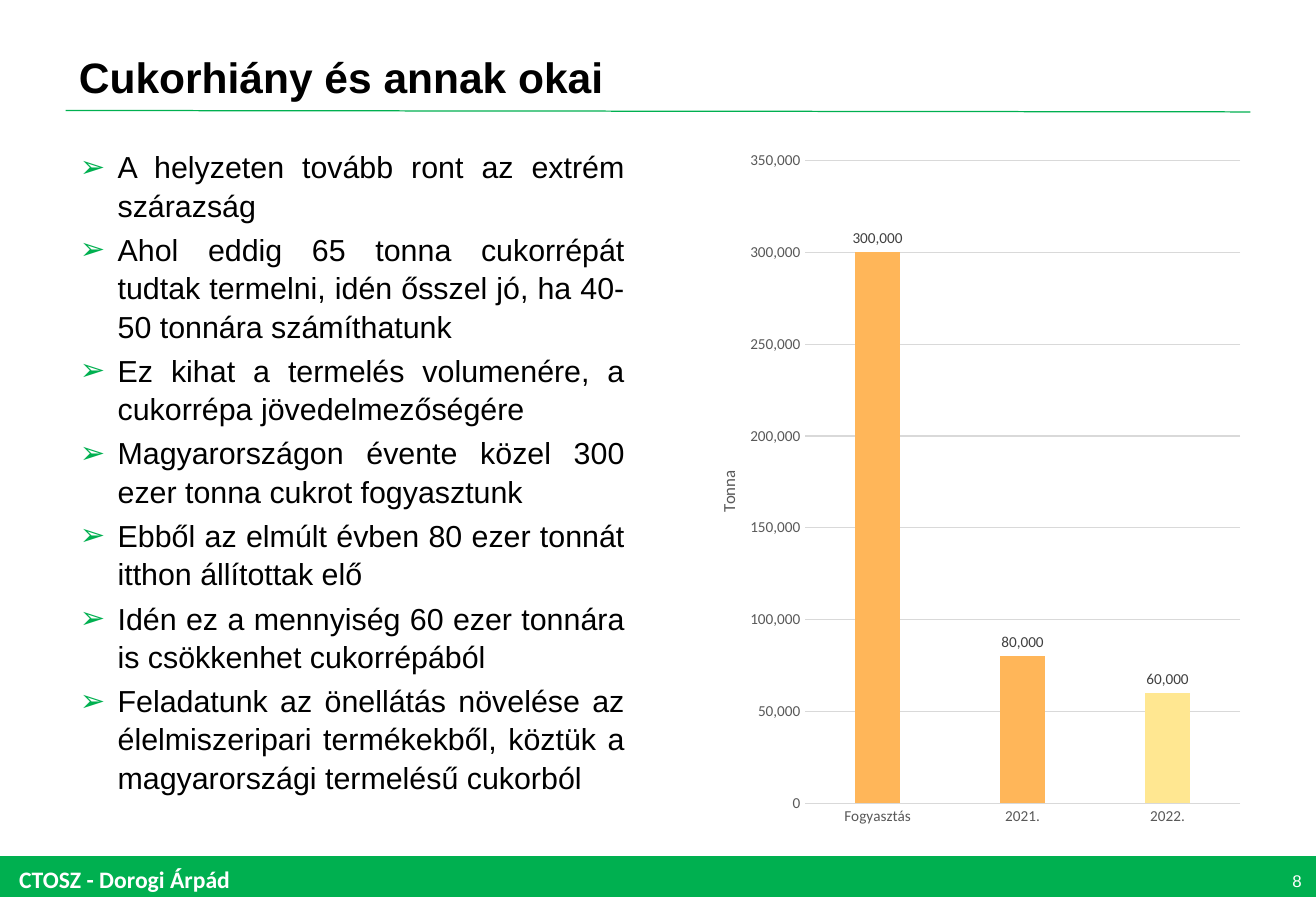
from lxml import etree
from pptx import Presentation
from pptx.chart.data import CategoryChartData
from pptx.dml.color import RGBColor
from pptx.enum.chart import XL_CHART_TYPE, XL_LABEL_POSITION, XL_TICK_MARK
from pptx.enum.shapes import MSO_CONNECTOR, MSO_SHAPE
from pptx.enum.text import MSO_ANCHOR, MSO_AUTO_SIZE, PP_ALIGN
from pptx.oxml import parse_xml
from pptx.oxml.ns import nsdecls, qn
from pptx.util import Cm, Pt

GREEN, BLACK, WHITE = "00B050", "000000", "FFFFFF"
GREY, GRID, LABEL = "595959", "D9D9D9", "404040"
ORANGE, YELLOW = "FFB659", "FFE791"

REASONS = [
    "A helyzeten tovább ront az extrém szárazság",
    "Ahol eddig 65 tonna cukorrépát tudtak termelni, idén ősszel jó, ha 40-50 tonnára számíthatunk",
    "Ez kihat a termelés volumenére, a cukorrépa jövedelmezőségére",
    "Magyarországon évente közel 300 ezer tonna cukrot fogyasztunk",
    "Ebből az elmúlt évben 80 ezer tonnát itthon állítottak elő",
    "Idén ez a mennyiség 60 ezer tonnára is csökkenhet cukorrépából",
    "Feladatunk az önellátás növelése az élelmiszeripari termékekből, "
    "köztük a magyarországi termelésű cukorból",
]
SUGAR = {"Fogyasztás": 300000, "2021.": 80000, "2022.": 60000}


def rgb(value):
    return RGBColor.from_string(value)


def set_attrs(target, values):
    for name, value in values.items():
        setattr(target, name, value)


def set_font(font, size, color, name="Arial", bold=False):
    set_attrs(font, dict(size=Pt(size), name=name, bold=bold))
    font.color.rgb = rgb(color)


def set_line(line, color, width):
    line.color.rgb = rgb(color)
    line.width = Pt(width)


def layout_xml(**values):
    items = "".join(f'<c:{tag} val="{val}"/>' for tag, val in values.items())
    return parse_xml(f'<c:layout {nsdecls("c")}><c:manualLayout>{items}'
                     '</c:manualLayout></c:layout>')


class SlideBuilder:
    frame = dict(margin_left=Cm(0.3), margin_right=Cm(0.3),
                 margin_top=Cm(0.15), margin_bottom=Cm(0.15),
                 word_wrap=True, auto_size=MSO_AUTO_SIZE.NONE)

    def __init__(self, prs):
        self.s = prs.slides.add_slide(prs.slide_layouts[5])

    def title(self, text, box):
        sp = self.s.shapes.title
        set_attrs(sp, dict(zip(("left", "top", "width", "height"), map(Cm, box))))
        self.fill_text(sp, [text], dict(size=25.2, color=BLACK, bold=True),
                       anchor=MSO_ANCHOR.MIDDLE)

    def text(self, lines, box, font, **options):
        sp = self.s.shapes.add_textbox(*map(Cm, box))
        self.fill_text(sp, lines, font, **options)

    def fill_text(self, sp, lines, font, align=PP_ALIGN.LEFT,
                  anchor=MSO_ANCHOR.TOP, bullet=None):
        tf = sp.text_frame
        set_attrs(tf, dict(self.frame, vertical_anchor=anchor))
        for i, line in enumerate(lines):
            p = tf.add_paragraph() if i else tf.paragraphs[0]
            p.alignment = align
            if bullet:
                self.bullet(p, bullet)
                p.line_spacing = 1.05
                p.space_before = Pt(3.6 if i else 0)
            r = p.add_run()
            r.text = line
            set_font(r.font, **font)

    def bullet(self, p, char):
        pPr = p._p.get_or_add_pPr()
        pPr.set("marL", str(Cm(0.79)))
        pPr.set("indent", str(-Cm(0.79)))
        color = etree.SubElement(pPr, qn("a:buClr"))
        etree.SubElement(color, qn("a:srgbClr")).set("val", GREEN)
        etree.SubElement(pPr, qn("a:buFont")).set("typeface", "Arial")
        etree.SubElement(pPr, qn("a:buChar")).set("char", char)

    def rule(self, ends):
        line = self.s.shapes.add_connector(MSO_CONNECTOR.STRAIGHT, *map(Cm, ends))
        set_line(line.line, GREEN, 0.75)
        etree.SubElement(line._element.spPr, qn("a:effectLst"))

    def band(self, box):
        sp = self.s.shapes.add_shape(MSO_SHAPE.RECTANGLE, *map(Cm, box))
        sp.shadow.inherit = False
        sp.fill.solid()
        sp.fill.fore_color.rgb = rgb(GREEN)
        set_line(sp.line, GREEN, 2)

    def column_chart(self, values, box):
        data = CategoryChartData(number_format="#,##0")
        data.categories = list(values)
        data.add_series("Series 1", list(values.values()))
        chart = self.s.shapes.add_chart(
            XL_CHART_TYPE.COLUMN_CLUSTERED, *map(Cm, box), data).chart
        set_attrs(chart, dict(has_legend=False, has_title=False))
        set_font(chart.font, 10, BLACK, "Calibri")
        self.axes(chart)
        self.columns(chart.plots[0])
        plot_area = chart._chartSpace.chart.plotArea
        for old in plot_area.findall(qn("c:layout")):
            plot_area.remove(old)
        plot_area.insert(0, layout_xml(
            layoutTarget="inner", xMode="edge", yMode="edge",
            x=0.21, y=0.03, w=0.77, h=0.92))

    def axes(self, chart):
        cat, val = chart.category_axis, chart.value_axis
        for axis in (cat, val):
            set_attrs(axis, dict(major_tick_mark=XL_TICK_MARK.NONE,
                                 minor_tick_mark=XL_TICK_MARK.NONE))
            set_font(axis.tick_labels.font, 9, GREY, "Calibri")
        set_line(cat.format.line, GRID, 0.75)
        set_attrs(val, dict(minimum_scale=0, maximum_scale=350000,
                            major_unit=50000, has_major_gridlines=True))
        val.format.line.fill.background()
        set_line(val.major_gridlines.format.line, GRID, 0.75)
        set_attrs(val.tick_labels, dict(number_format="#,##0",
                                        number_format_is_linked=False))
        # Rotated axis title
        tf = val.axis_title.text_frame
        tf.text = "Tonna"
        set_font(tf.paragraphs[0].runs[0].font, 10, GREY, "Calibri")
        tf._txBody.bodyPr.set("rot", "-5400000")
        tf._txBody.bodyPr.set("vert", "horz")
        title = val.axis_title._element
        for old in title.findall(qn("c:layout")):
            title.remove(old)
        title.find(qn("c:tx")).addnext(
            layout_xml(xMode="edge", yMode="edge", x=0.05, y=0.47))

    def columns(self, plot):
        set_attrs(plot, dict(gap_width=219, overlap=-27, vary_by_categories=False,
                             has_data_labels=True))
        series = plot.series[0]
        for part, color in ((series, ORANGE), (series.points[2], YELLOW)):
            part.format.fill.solid()
            part.format.fill.fore_color.rgb = rgb(color)
        labels = plot.data_labels
        set_attrs(labels, dict(show_value=True, number_format="#,##0",
                               number_format_is_linked=False,
                               position=XL_LABEL_POSITION.OUTSIDE_END))
        set_font(labels.font, 9, LABEL, "Calibri")


def main():
    prs = Presentation()
    set_attrs(prs, dict(slide_width=Cm(27.51), slide_height=Cm(19.05)))
    slide = SlideBuilder(prs)

    # Heading
    slide.rule((1.37, 2.31, 26.14, 2.34))
    slide.title("Cukorhiány és annak okai", (1.35, 0.91, 21.01, 1.37))

    # Reasons and chart
    slide.text(REASONS, (1.37, 2.92, 11.99, 14.61), dict(size=18, color=BLACK),
               align=PP_ALIGN.JUSTIFY, bullet="➢")
    slide.column_chart(SUGAR, (14.35, 2.92, 11.81, 14.61))

    # Footer
    slide.band((0, 17.93, 27.51, 0.79))
    slide.text(["CTOSZ - Dorogi Árpád"], (0.1, 17.93, 5.8, 0.86),
               dict(size=14, color=WHITE, name="Calibri", bold=True))
    slide.text(["8"], (26.44, 17.91, 1.07, 1.02), dict(size=10, color=WHITE),
               align=PP_ALIGN.RIGHT, anchor=MSO_ANCHOR.MIDDLE)

    prs.save("out.pptx")


if __name__ == "__main__":
    main()
